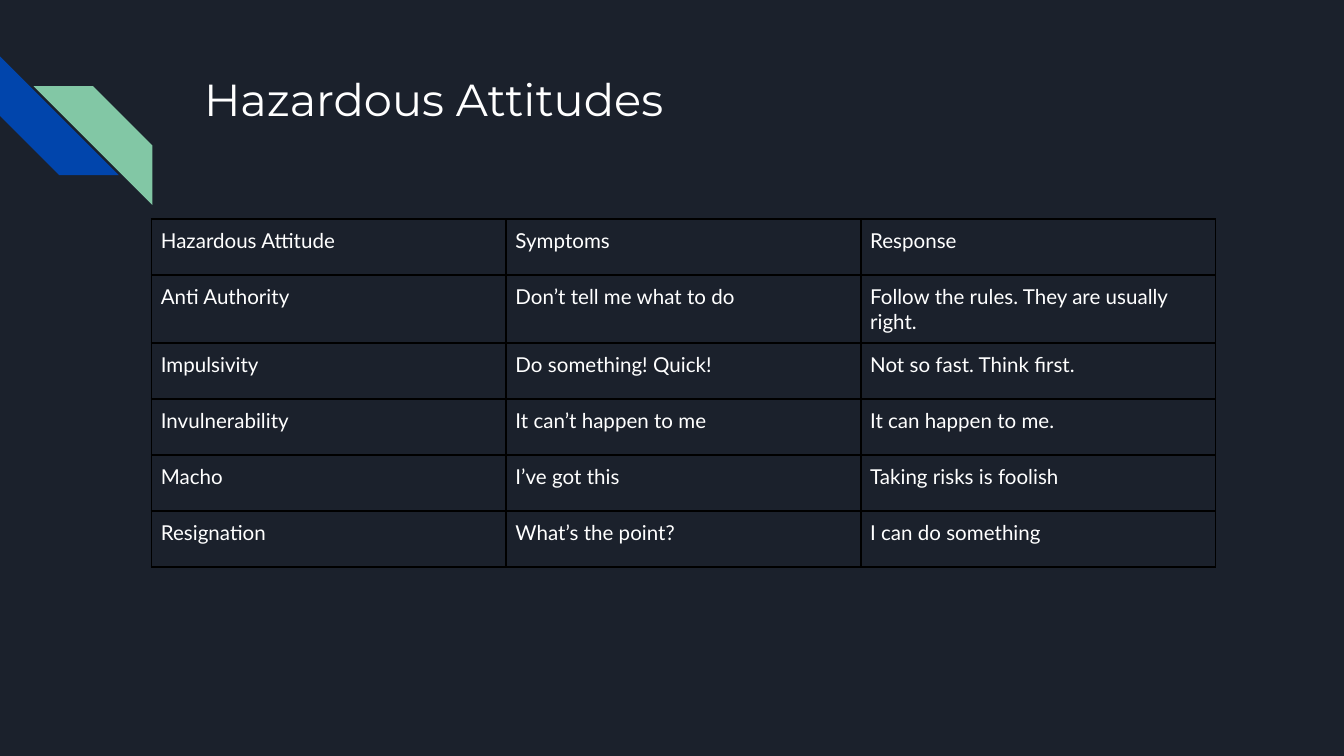
import pptx
import pptx.dml.color
import pptx.enum.shapes
import pptx.enum.text
import pptx.oxml
import pptx.oxml.ns
import pptx.util

COLUMNS, ROWS = 100, 56.25
UNIT = pptx.util.Inches(0.1)
WHITE, BLACK, NAVY, BLUE, GREEN = "FFFFFF", "000000", "1B212C", "0145AC", "82C7A5"
ATTITUDES = [
    ("Hazardous Attitude", "Symptoms", "Response"),
    ("Anti Authority", "Don’t tell me what to do", "Follow the rules. They are usually right."),
    ("Impulsivity", "Do something! Quick!", "Not so fast. Think first."),
    ("Invulnerability", "It can’t happen to me", "It can happen to me."),
    ("Macho", "I’ve got this", "Taking risks is foolish"),
    ("Resignation", "What’s the point?", "I can do something"),
]


def grid(*lengths):
    return [round(length * UNIT) for length in lengths]


def color(value):
    return pptx.dml.color.RGBColor.from_string(value)


def paint(fill, value):
    fill.solid()
    fill.fore_color.rgb = color(value)


def write(text_frame, text, font_name, size):
    text_frame.text = text
    font = text_frame.paragraphs[0].font
    font.name, font.size = font_name, pptx.util.Pt(size)
    font.color.rgb = color(WHITE)


def set_margins(holder, length):
    margin, = grid(length)
    holder.margin_left = holder.margin_right = margin
    holder.margin_top = holder.margin_bottom = margin


def add_stripe(slide, box, fill_color):
    stripe = slide.shapes.add_shape(
        pptx.enum.shapes.MSO_SHAPE.DIAGONAL_STRIPE, *grid(*box))
    stripe.adjustments[0] = 0.5
    stripe.shadow.inherit = False
    paint(stripe.fill, fill_color)
    stripe.line.fill.background()
    return stripe


def add_corner(slide, box):
    left, top, width, height = box
    size = 8.84
    blue_stripe = add_stripe(slide, (left, top, size, size), BLUE)
    blue_stripe.rotation = 270
    green_stripe = add_stripe(
        slide, (left + width - size, top + height - size, size, size), GREEN)
    green_stripe.element.spPr.get_or_add_xfrm().set("flipH", "1")


def add_title(slide, box):
    text_frame = slide.shapes.add_textbox(*grid(*box)).text_frame
    text_frame.word_wrap = True
    text_frame.vertical_anchor = pptx.enum.text.MSO_ANCHOR.TOP
    set_margins(text_frame, 1)
    write(text_frame, "Hazardous Attitudes", "Montserrat", 24)


def add_borders(cell):
    properties = cell._tc.get_or_add_tcPr()
    for side in ("lnL", "lnR", "lnT", "lnB"):
        properties.append(pptx.oxml.parse_xml(
            f'<a:{side} {pptx.oxml.ns.nsdecls("a")} w="{pptx.util.Pt(1)}">'
            f'<a:solidFill><a:srgbClr val="{BLACK}"/></a:solidFill></a:{side}>'))


def add_attitude_table(slide, box):
    table = slide.shapes.add_table(
        len(ATTITUDES), len(ATTITUDES[0]), *grid(*box)).table
    table.first_row = table.horz_banding = False
    for row, texts in enumerate(ATTITUDES):
        for column, text in enumerate(texts):
            cell = table.cell(row, column)
            set_margins(cell, 0.7)
            write(cell.text_frame, text, "Lato", 11)
            add_borders(cell)
            cell.fill.background()


def main():
    presentation = pptx.Presentation()
    presentation.slide_width, presentation.slide_height = grid(COLUMNS, ROWS)
    slide = presentation.slides.add_slide(presentation.slide_layouts[6])
    paint(slide.background.fill, NAVY)
    add_corner(slide, (0, 4.2, 11.34, 11.05))
    add_title(slide, (14.2, 4.35, 77, 10))
    add_attitude_table(slide, (11.27, 16.3, 79.16, 25))
    presentation.save("out.pptx")


if __name__ == "__main__":
    main()
